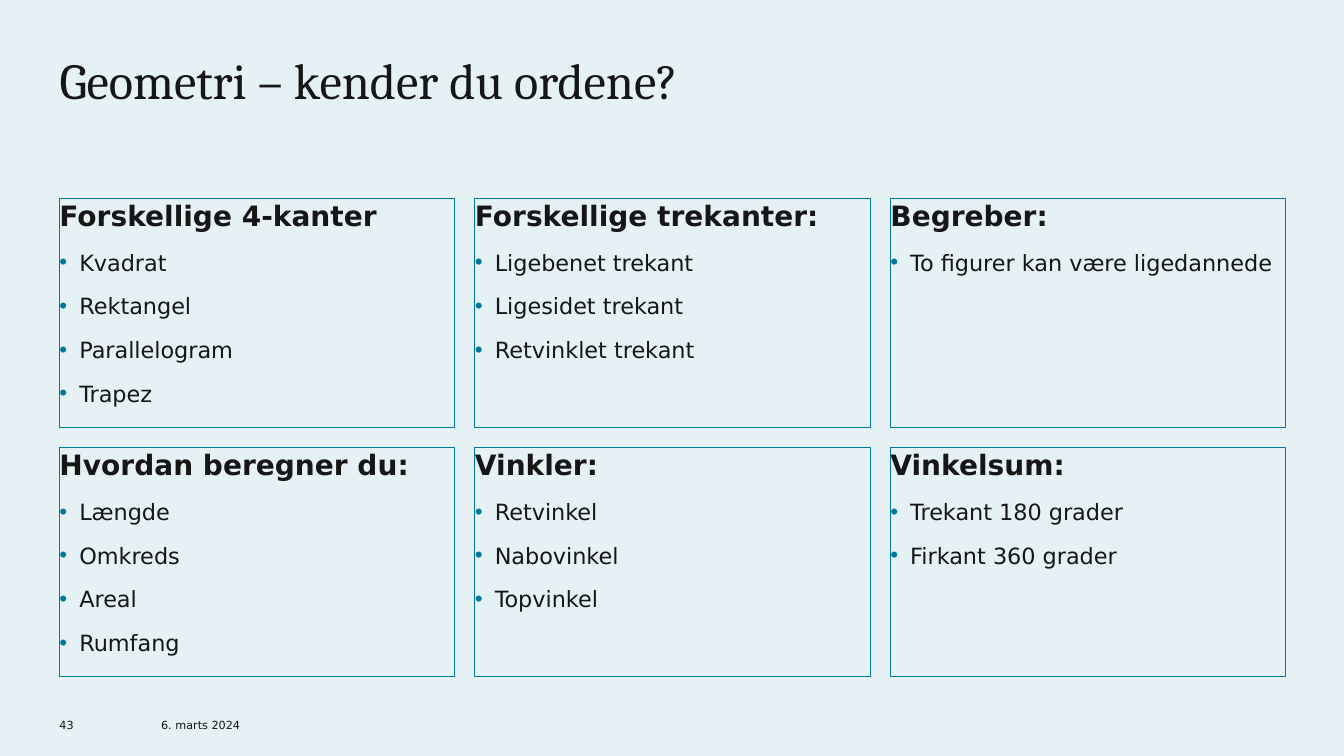
from lxml import etree
from pptx import Presentation
from pptx.dml.color import RGBColor
from pptx.enum.shapes import MSO_SHAPE
from pptx.enum.text import MSO_ANCHOR, MSO_AUTO_SIZE, PP_ALIGN
from pptx.oxml.ns import qn
from pptx.util import Cm, Pt

RECTANGLE = MSO_SHAPE.RECTANGLE
TOP, BOTTOM = MSO_ANCHOR.TOP, MSO_ANCHOR.BOTTOM
LEFT = PP_ALIGN.LEFT
NO_AUTOFIT = MSO_AUTO_SIZE.NONE
TITLE_LAYOUT = 5

COLORS = {"background": "E5F1F4", "text": "161616", "accent": "007A98"}
HEADING_FONT, BODY_FONT = "Cambria", "DejaVu Sans"

MARGIN = 1.5
CARD_WIDTH, CARD_HEIGHT = 9.96, 5.77
CARD_TOP, COLUMN_STEP, ROW_STEP = 5, 10.47, 6.28
COLUMNS = 3
FOOTER_TOP, FOOTER_HEIGHT = 17.93, 0.51
BULLET_INDENT = 0.5

TOPICS = [
    ("Forskellige 4-kanter", ["Kvadrat", "Rektangel", "Parallelogram", "Trapez"]),
    ("Forskellige trekanter:",
     ["Ligebenet trekant", "Ligesidet trekant", "Retvinklet trekant"]),
    ("Begreber:", ["To figurer kan være ligedannede"]),
    ("Hvordan beregner du:", ["Længde", "Omkreds", "Areal", "Rumfang"]),
    ("Vinkler:", ["Retvinkel", "Nabovinkel", "Topvinkel"]),
    ("Vinkelsum:", ["Trekant 180 grader", "Firkant 360 grader"]),
]


def color(name):
    """Return the named colour of the palette."""
    return RGBColor.from_string(COLORS[name])


def prepare_frame(frame, anchor=TOP):
    """Remove the insets of a text frame and set its wrapping and anchor."""
    frame.margin_left = frame.margin_right = 0
    frame.margin_top = frame.margin_bottom = 0
    frame.word_wrap = True
    frame.auto_size = NO_AUTOFIT
    frame.vertical_anchor = anchor


def add_bullet(paragraph):
    """Give a paragraph a hanging bullet in the accent colour."""
    properties = paragraph._p.get_or_add_pPr()
    indent = Cm(BULLET_INDENT)
    properties.set("marL", str(indent))
    properties.set("indent", str(-indent))
    bullet_color = etree.SubElement(properties, qn("a:buClr"))
    etree.SubElement(bullet_color, qn("a:srgbClr"), val=COLORS["accent"])
    etree.SubElement(properties, qn("a:buFont"), typeface="Arial")
    etree.SubElement(properties, qn("a:buChar"), char="•")


def write(paragraph, text, size, font=BODY_FONT, bold=False, bullet=False,
          before=None, line_spacing=None):
    """Fill a paragraph with formatted text."""
    if bullet:
        add_bullet(paragraph)
    paragraph.alignment = LEFT
    paragraph.space_before = before
    paragraph.line_spacing = line_spacing
    run = paragraph.add_run()
    run.text = text
    run.font.name = font
    run.font.size = Pt(size)
    run.font.bold = bold
    run.font.color.rgb = color("text")


def place_title(slide, text):
    """Move and fill the title placeholder."""
    title = slide.shapes.title
    title.left, title.top = Cm(MARGIN), Cm(MARGIN)
    title.width, title.height = Cm(25.7), Cm(2.59)
    prepare_frame(title.text_frame)
    write(title.text_frame.paragraphs[0], text, 36, font=HEADING_FONT,
          line_spacing=0.83)


def add_topic(slide, index, heading, terms):
    """Add an outlined card with a heading and its bulleted terms."""
    row, column = divmod(index, COLUMNS)
    card = slide.shapes.add_shape(
        RECTANGLE, Cm(MARGIN + column * COLUMN_STEP),
        Cm(CARD_TOP + row * ROW_STEP), Cm(CARD_WIDTH), Cm(CARD_HEIGHT))
    card.shadow.inherit = False
    card.fill.background()
    card.line.color.rgb = color("accent")
    card.line.width = Pt(0.75)
    frame = card.text_frame
    prepare_frame(frame)
    write(frame.paragraphs[0], heading, 20, bold=True)
    for term in terms:
        write(frame.add_paragraph(), term, 16, bullet=True, before=Pt(12))


def add_footer(slide, text, left, width):
    """Add a small text on the footer line."""
    footer = slide.shapes.add_textbox(
        Cm(left), Cm(FOOTER_TOP), Cm(width), Cm(FOOTER_HEIGHT))
    prepare_frame(footer.text_frame, BOTTOM)
    write(footer.text_frame.paragraphs[0], text, 8)


def main():
    """Build the slide and save it."""
    presentation = Presentation()
    presentation.slide_width, presentation.slide_height = Cm(33.87), Cm(19.05)
    slide = presentation.slides.add_slide(presentation.slide_layouts[TITLE_LAYOUT])
    slide.background.fill.solid()
    slide.background.fill.fore_color.rgb = color("background")
    place_title(slide, "Geometri – kender du ordene?")
    for index, (heading, terms) in enumerate(TOPICS):
        add_topic(slide, index, heading, terms)
    add_footer(slide, "6. marts 2024", 4.06, 3.53)
    add_footer(slide, "43", MARGIN, 0.76)
    presentation.save("out.pptx")


if __name__ == "__main__":
    main()
